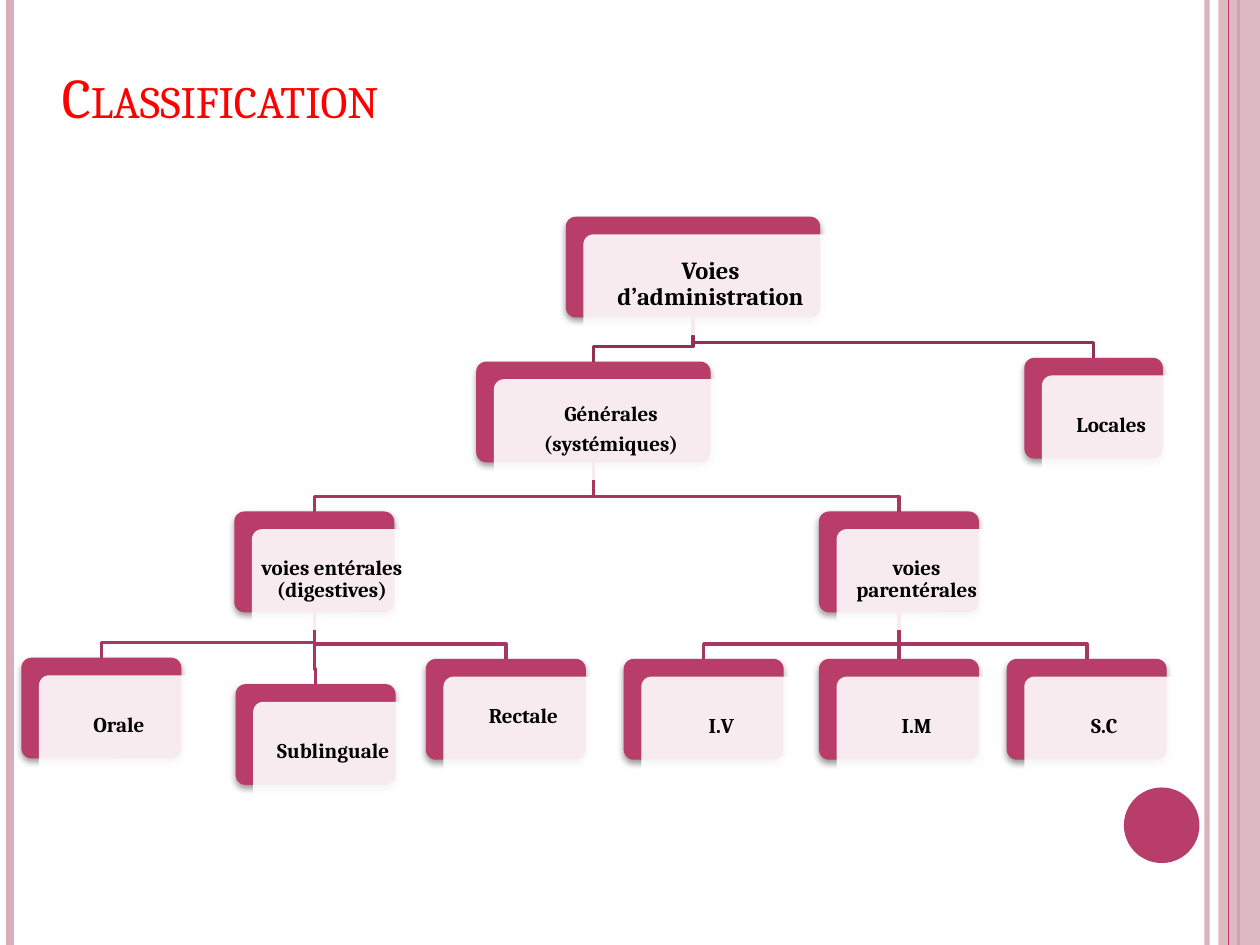
import dataclasses

import pptx
import pptx.dml.color
import pptx.enum.shapes
import pptx.enum.text
import pptx.oxml
import pptx.oxml.ns
import pptx.util

Inches = pptx.util.Inches
Pt = pptx.util.Pt
Shape = pptx.enum.shapes.MSO_SHAPE
Align = pptx.enum.text.PP_ALIGN
Anchor = pptx.enum.text.MSO_ANCHOR


@dataclasses.dataclass(frozen=True)
class Theme:
    font: str = "Cambria"
    title_size: int = 32
    root_size: int = 14
    node_size: int = 12
    title: str = "FF0000"
    text: str = "000000"
    accent: str = "B83D68"
    stripe: str = "D8AFB9"
    card: str = "FFFFFF"
    root_link: str = "933153"
    link: str = "A7375E"


@dataclasses.dataclass(frozen=True)
class Node:
    lines: tuple
    left: float
    top: float
    width: float = 1.27
    parent: str = ""
    size: int = Theme.node_size
    bottom_inset: float = 0.05

    @property
    def center(self):
        return self.left + self.width / 2


THEME = Theme()
NODE_HEIGHT = 0.8
CARD_OFFSET = 0.14
BEND_ABOVE_CHILD = 0.12

NODES = {
    "root": Node(("Voies d’administration",), 4.49, 1.72, 2.02, size=THEME.root_size),
    "general": Node(("Générales", "(systémiques)"), 3.78, 2.87, 1.86, "root"),
    "local": Node(("Locales",), 8.13, 2.84, 1.1, "root"),
    "enteral": Node(("voies entérales (digestives)",), 1.86, 4.06, parent="general"),
    "parenteral": Node(("voies parentérales",), 6.5, 4.06, parent="general"),
    "oral": Node(("Orale",), 0.17, 5.22, parent="enteral"),
    "sublingual": Node(("Sublinguale",), 1.87, 5.43, parent="enteral"),
    "rectal": Node(("Rectale",), 3.38, 5.23, parent="enteral", bottom_inset=0.21),
    "intravenous": Node(("I.V",), 4.95, 5.23, parent="parenteral"),
    "intramuscular": Node(("I.M",), 6.5, 5.23, parent="parenteral"),
    "subcutaneous": Node(("S.C",), 7.99, 5.23, parent="parenteral"),
}


def rgb(value):
    return pptx.dml.color.RGBColor.from_string(value)


def set_opacity(shape, percent):
    for color in shape._element.spPr.iter(pptx.oxml.ns.qn("a:srgbClr")):
        alpha = color.makeelement(pptx.oxml.ns.qn("a:alpha"), {"val": str(percent * 1000)})
        color.append(alpha)


def add_shadow(shape):
    effects = pptx.oxml.parse_xml(
        f'<a:effectLst {pptx.oxml.ns.nsdecls("a")}>'
        f'<a:outerShdw blurRad="{Pt(4)}" dist="{Pt(2)}" dir="5400000" rotWithShape="0">'
        '<a:srgbClr val="000000"><a:alpha val="40000"/></a:srgbClr>'
        "</a:outerShdw></a:effectLst>"
    )
    shape._element.spPr.append(effects)


def add_filled(slide, kind, left, top, width, height, color):
    shape = slide.shapes.add_shape(
        kind, Inches(left), Inches(top), Inches(width), Inches(height)
    )
    shape.fill.solid()
    shape.fill.fore_color.rgb = rgb(color)
    shape.line.fill.background()
    return shape


def add_line(slide, start, end, color, width):
    line = slide.shapes.add_connector(
        pptx.enum.shapes.MSO_CONNECTOR.STRAIGHT, *map(Inches, start + end)
    )
    line.line.color.rgb = rgb(color)
    line.line.width = Pt(width)
    line._element.spPr.append(line._element.makeelement(pptx.oxml.ns.qn("a:effectLst"), {}))
    return line


def add_stripe(slide, x, color, width):
    return add_line(slide, (x, 0), (x, 7.5), color, width)


def add_decoration(slide):
    set_opacity(add_stripe(slide, 9.58, THEME.stripe, 3), 93)
    add_stripe(slide, 0.08, THEME.stripe, 4.5)
    add_stripe(slide, 9.83, THEME.accent, 1.5)
    band = add_filled(slide, Shape.RECTANGLE, 9.67, 0, 0.33, 7.5, THEME.stripe)
    band.shadow.inherit = False
    set_opacity(band, 87)
    add_stripe(slide, 9.75, THEME.accent, 0.75)
    disc = add_filled(slide, Shape.OVAL, 8.92, 6.25, 0.6, 0.6, THEME.accent)
    disc.shadow.inherit = False


def format_font(paragraph, size, color, bold):
    paragraph.font.name = THEME.font
    paragraph.font.size = Pt(size)
    paragraph.font.bold = bold
    paragraph.font.color.rgb = rgb(color)


def add_title(slide, text):
    title = slide.shapes.title
    title.left, title.top, title.width, title.height = map(Inches, (0.39, 0.23, 8.17, 0.85))
    title.text_frame.text = text
    title.text_frame.vertical_anchor = Anchor.BOTTOM
    title.text_frame.auto_size = pptx.enum.text.MSO_AUTO_SIZE.NONE
    paragraph = title.text_frame.paragraphs[0]
    paragraph.alignment = Align.LEFT
    format_font(paragraph, THEME.title_size, THEME.title, False)
    paragraph._p.get_or_add_pPr().get_or_add_defRPr().set("cap", "small")


def add_base(slide, node):
    base = add_filled(
        slide, Shape.ROUNDED_RECTANGLE, node.left, node.top, node.width, NODE_HEIGHT, THEME.accent
    )
    base.adjustments[0] = 0.1
    add_shadow(base)
    return base


def add_elbow(slide, parent, child, color):
    bend = child.top - BEND_ABOVE_CHILD
    start = (parent.center, parent.top + NODE_HEIGHT)
    corners = [(parent.center, bend), (child.center, bend), (child.center, child.top)]
    builder = slide.shapes.build_freeform(*map(Inches, start))
    builder.add_line_segments([tuple(map(Inches, corner)) for corner in corners], close=False)
    elbow = builder.convert_to_shape()
    elbow.fill.background()
    elbow.line.color.rgb = rgb(color)
    elbow.line.width = Pt(2)
    elbow.shadow.inherit = False


def add_link(slide, child, bases, name):
    parent = NODES[child.parent]
    color = THEME.root_link if child.parent == "root" else THEME.link
    if parent.center == child.center:
        start = (parent.center, parent.top + NODE_HEIGHT)
        line = add_line(slide, start, (child.center, child.top), color, 2)
        line.begin_connect(bases[child.parent], 2)
        line.end_connect(bases[name], 0)
    else:
        add_elbow(slide, parent, child, color)


def add_card(slide, node):
    card = add_filled(
        slide, Shape.ROUNDED_RECTANGLE, node.left + CARD_OFFSET, node.top + CARD_OFFSET,
        node.width, NODE_HEIGHT, THEME.card,
    )
    card.adjustments[0] = 0.1
    card.shadow.inherit = False
    set_opacity(card, 90)
    frame = card.text_frame
    frame.word_wrap = True
    frame.vertical_anchor = Anchor.MIDDLE
    frame.margin_left = frame.margin_right = frame.margin_top = Inches(0.05)
    frame.margin_bottom = Inches(node.bottom_inset)
    frame.text = "\n".join(node.lines)
    for paragraph in frame.paragraphs:
        paragraph.alignment = Align.CENTER
        paragraph.line_spacing = 0.9
        paragraph.space_after = Pt(0.35 * node.size)
        format_font(paragraph, node.size, THEME.text, True)


def main():
    presentation = pptx.Presentation()
    presentation.slide_width = Inches(10)
    presentation.slide_height = Inches(7.5)
    slide = presentation.slides.add_slide(presentation.slide_layouts[5])
    add_decoration(slide)
    add_title(slide, "Classification")
    bases = {name: add_base(slide, node) for name, node in NODES.items()}
    for name, node in NODES.items():
        if node.parent:
            add_link(slide, node, bases, name)
    for node in NODES.values():
        add_card(slide, node)
    presentation.save("out.pptx")


if __name__ == "__main__":
    main()
